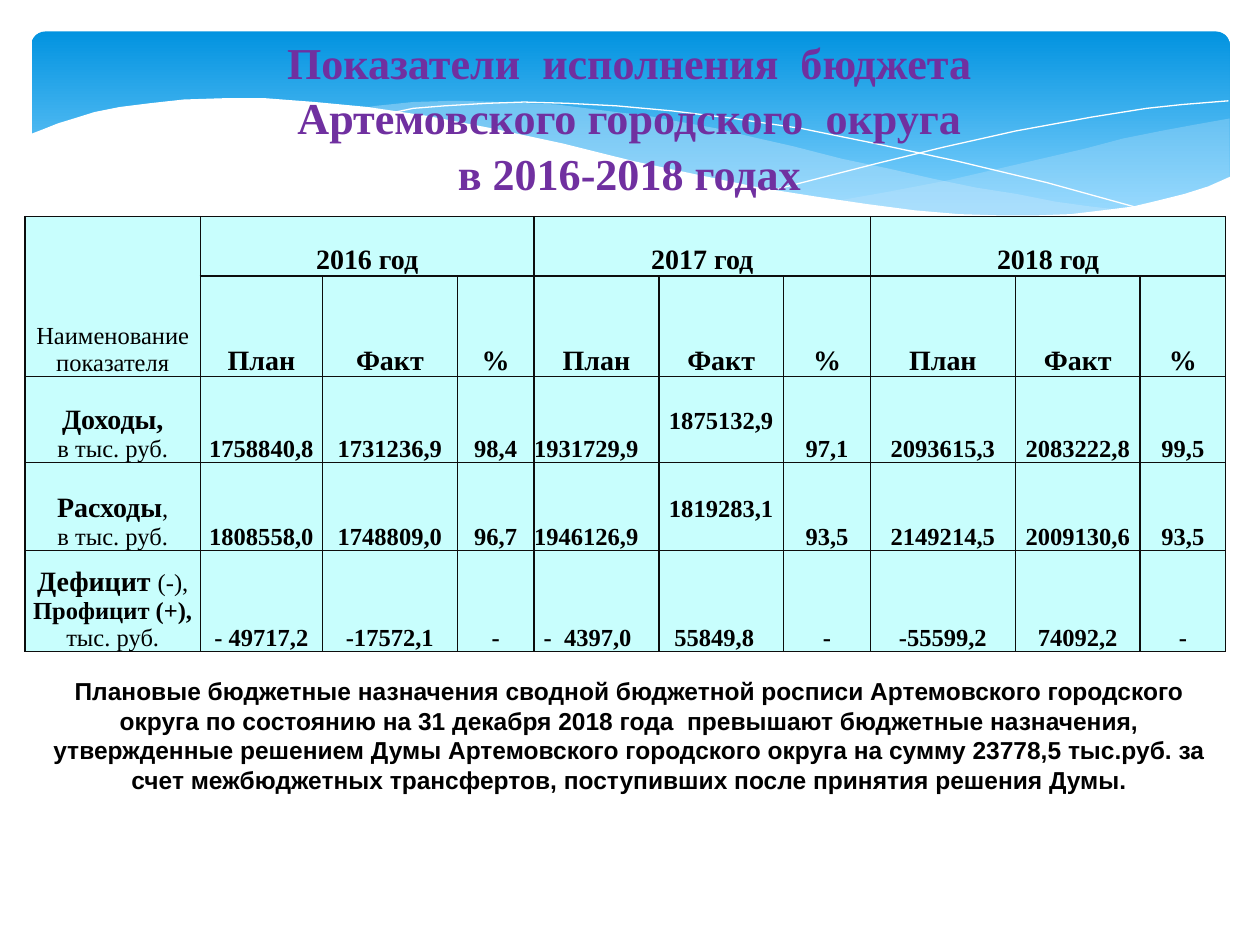
from dataclasses import dataclass
from typing import NamedTuple, Optional

from lxml.etree import SubElement
from pptx import Presentation
from pptx.dml.color import RGBColor
from pptx.enum.shapes import MSO_SHAPE as Shape
from pptx.enum.text import MSO_ANCHOR as Anchor, MSO_AUTO_SIZE as AutoSize, PP_ALIGN as Align
from pptx.oxml.ns import qn
from pptx.util import Emu, Pt

EMU_PER_PX = 9144


@dataclass(frozen=True)
class Theme:
    serif: str = "Times New Roman"
    sans: str = "Arial"
    sky_top: str = "0293E0"
    sky_bottom: str = "83D3FE"
    wave: str = "C6E7FC"
    white: str = "FFFFFF"
    title: str = "7030A0"
    text: str = "000000"
    cell: str = "C8FEFD"
    border: str = "0D0D0D"
    title_size: float = 25.2
    head_size: int = 16
    body_size: int = 14


class Run(NamedTuple):
    text: str
    size: float
    bold: bool = False


class Wave(NamedTuple):
    points: list
    fill: Optional[str] = None
    alpha: int = 100


class Nudge(NamedTuple):
    align: Align = Align.CENTER
    right: int = 0
    bottom: int = 0


T = Theme()
TITLE = "Показатели  исполнения  бюджета\nАртемовского городского  округа\nв 2016-2018 годах"
NOTE = ("Плановые бюджетные назначения сводной бюджетной росписи Артемовского городского "
        "округа по состоянию на 31 декабря 2018 года  превышают бюджетные назначения, "
        "утвержденные решением Думы Артемовского городского округа на сумму 23778,5 тыс.руб. "
        "за счет межбюджетных трансфертов, поступивших после принятия решения Думы.")

WAVES = [
    Wave([(976, 94), (948, 99), (921, 104), (891, 110), (861, 118), (805, 131), (753, 143),
          (706, 152), (661, 160), (691, 164), (718, 167), (745, 169), (769, 171), (792, 172),
          (824, 172), (854, 170), (881, 167), (905, 163), (928, 158), (949, 152), (976, 141)],
         T.wave, 29),
    Wave([(893, 167), (866, 164), (837, 160), (807, 154), (775, 149), (741, 142), (706, 134),
          (668, 126), (629, 116), (598, 109), (569, 102), (541, 97), (514, 92), (489, 89),
          (442, 83), (399, 81), (361, 80), (328, 81), (299, 84), (286, 86), (323, 91),
          (362, 97), (404, 106), (449, 116), (491, 126), (530, 135), (566, 143), (601, 150),
          (634, 156), (665, 161), (695, 165), (722, 168), (748, 170), (773, 172), (807, 173),
          (838, 172), (867, 170)], T.wave, 40),
    Wave([(309, 90), (328, 86), (353, 84), (387, 82), (416, 81), (450, 82), (489, 84),
          (533, 88), (582, 94), (636, 102), (695, 114), (760, 128), (831, 145), (907, 166)]),
    Wave([(613, 151), (652, 141), (695, 130), (748, 117), (806, 104), (866, 93), (910, 86),
          (938, 83), (975, 80)]),
    Wave([(977, 140), (959, 148), (940, 154), (920, 159), (899, 164), (875, 167), (850, 170),
          (823, 171), (793, 171), (761, 170), (726, 167), (688, 162), (647, 156), (603, 149),
          (555, 139), (503, 128), (447, 114), (391, 102), (339, 92), (292, 85), (250, 81),
          (211, 78), (177, 78), (146, 79), (119, 82), (95, 85), (75, 89), (59, 94), (46, 98),
          (36, 102), (23, 107), (23, 224), (977, 224)], T.white),
]

COLUMNS = [139, 97, 107, 61, 99, 99, 69, 115, 99, 68]
ROWS = [47, 80, 68, 70, 80]
YEARS = ["2016 год", "2017 год", "2018 год"]
MEASURES = ["План", "Факт", "%"]
UNIT = Run("в тыс. руб.", T.body_size)
LABELS = [
    [[Run("Доходы,", T.head_size, True)], [UNIT]],
    [[Run("Расходы", T.head_size, True), Run(",", T.body_size)], [UNIT]],
    [[Run("Дефицит ", T.head_size, True), Run("(-), ", T.body_size),
      Run("Профицит (+),", T.body_size, True)], [Run("тыс. руб.", T.body_size)]],
]
VALUES = [
    ["1758840,8", "1731236,9", "98,4", "1931729,9", "1875132,9", "97,1",
     "2093615,3", "2083222,8", "99,5"],
    ["1808558,0", "1748809,0", "96,7", "1946126,9", "1819283,1", "93,5",
     "2149214,5", "2009130,6", "93,5"],
    ["- 49717,2", "-17572,1", "-", "-  4397,0", "55849,8", "-", "-55599,2", "74092,2", "-"],
]
NUDGES = {
    (2, 4): Nudge(align=Align.LEFT), (3, 4): Nudge(align=Align.LEFT),
    (2, 5): Nudge(bottom=22), (3, 5): Nudge(bottom=22),
    (4, 4): Nudge(right=14), (4, 5): Nudge(right=11),
}


def px(n: int) -> Emu:
    return Emu(n * EMU_PER_PX)


def rgb(color: str) -> RGBColor:
    return RGBColor.from_string(color)


def write(p, text: str, *, size: float, font: str = T.serif, color: str = T.text,
          bold: bool = False, align: Align = Align.CENTER) -> None:
    p.alignment = align
    for i, line in enumerate(text.split("\n")):
        if i:
            p.add_line_break()
        r = p.add_run()
        r.text = line
        r.font.name, r.font.size, r.font.bold = font, Pt(size), bold
        r.font.color.rgb = rgb(color)


def draw_sky(shapes) -> None:
    sp = shapes.add_shape(Shape.ROUNDED_RECTANGLE, px(25), px(25), px(951), px(156))
    sp.adjustments[0] = 0.07
    sp.shadow.inherit = False
    sp.line.fill.background()
    sp.fill.gradient()
    sp.fill.gradient_angle = 270
    stops = zip(sp.fill.gradient_stops, [(0, T.sky_top), (0.9, T.sky_bottom)])
    for stop, (position, color) in stops:
        stop.position, stop.color.rgb = position, rgb(color)


def draw_wave(shapes, wave: Wave) -> None:
    filled = wave.fill is not None
    builder = shapes.build_freeform(*wave.points[0], scale=EMU_PER_PX)
    builder.add_line_segments(wave.points[1:], close=filled)
    sp = builder.convert_to_shape()
    sp.shadow.inherit = False
    if not filled:
        sp.fill.background()
        sp.line.color.rgb, sp.line.width = rgb(T.white), Pt(0)
        return
    sp.line.fill.background()
    sp.fill.solid()
    sp.fill.fore_color.rgb = rgb(wave.fill)
    if wave.alpha < 100:
        clr = sp.element.spPr.find(qn("a:solidFill")).find(qn("a:srgbClr"))
        SubElement(clr, qn("a:alpha"), val=str(wave.alpha * 1000))


def format_cell(cell, nudge: Nudge) -> None:
    cell.margin_left = cell.margin_top = 0
    cell.margin_right, cell.margin_bottom = px(nudge.right), px(nudge.bottom)
    cell.vertical_anchor = Anchor.BOTTOM
    tcPr = cell._tc.get_or_add_tcPr()
    for side in ("a:lnL", "a:lnR", "a:lnT", "a:lnB"):
        ln = SubElement(tcPr, qn(side), w=str(Pt(1)))
        SubElement(SubElement(ln, qn("a:solidFill")), qn("a:srgbClr"), val=T.border)
    cell.fill.solid()
    cell.fill.fore_color.rgb = rgb(T.cell)


def draw_table(shapes) -> None:
    table = shapes.add_table(len(ROWS), len(COLUMNS), px(20), px(172),
                             px(sum(COLUMNS)), px(sum(ROWS))).table
    table.first_row = table.horz_banding = False
    for column, width in zip(table.columns, COLUMNS):
        column.width = px(width)
    for row, height in zip(table.rows, ROWS):
        row.height = px(height)
    for i in range(len(ROWS)):
        for j in range(len(COLUMNS)):
            format_cell(table.cell(i, j), NUDGES.get((i, j), Nudge()))

    def put(i: int, j: int, text: str, **fmt) -> None:
        write(table.cell(i, j).text_frame.paragraphs[0], text, **fmt)

    table.cell(0, 0).merge(table.cell(1, 0))
    put(0, 0, "Наименование показателя", size=T.body_size)
    for k, year in enumerate(YEARS):
        first = 1 + k * len(MEASURES)
        table.cell(0, first).merge(table.cell(0, first + len(MEASURES) - 1))
        put(0, first, year, size=T.head_size, bold=True)
        for j, measure in enumerate(MEASURES, first):
            put(1, j, measure, size=T.head_size, bold=True)
    for i, (label, values) in enumerate(zip(LABELS, VALUES), 2):
        tf = table.cell(i, 0).text_frame
        for k, runs in enumerate(label):
            p = tf.add_paragraph() if k else tf.paragraphs[0]
            for run in runs:
                write(p, run.text, size=run.size, bold=run.bold)
        for j, value in enumerate(values, 1):
            put(i, j, value, size=T.body_size, bold=True,
                align=NUDGES.get((i, j), Nudge()).align)


def place_title(slide) -> None:
    sp = slide.shapes.title
    slide.shapes.element.append(sp.element)
    sp.left, sp.top, sp.width, sp.height = px(27), px(21), px(945), px(142)
    tf = sp.text_frame
    tf.vertical_anchor, tf.auto_size = Anchor.MIDDLE, AutoSize.NONE
    p = tf.paragraphs[0]
    p.line_spacing = 1.05
    write(p, TITLE, size=T.title_size, color=T.title, bold=True)


def draw_note(shapes) -> None:
    tf = shapes.add_textbox(px(27), px(532), px(945), px(103)).text_frame
    tf.word_wrap = True
    write(tf.paragraphs[0], NOTE, size=T.body_size, font=T.sans, bold=True)


def main() -> None:
    prs = Presentation()
    prs.slide_width, prs.slide_height = px(1000), px(750)
    slide = prs.slides.add_slide(prs.slide_layouts[5])
    draw_sky(slide.shapes)
    for wave in WAVES:
        draw_wave(slide.shapes, wave)
    place_title(slide)
    draw_table(slide.shapes)
    draw_note(slide.shapes)
    prs.save("out.pptx")


if __name__ == "__main__":
    main()
